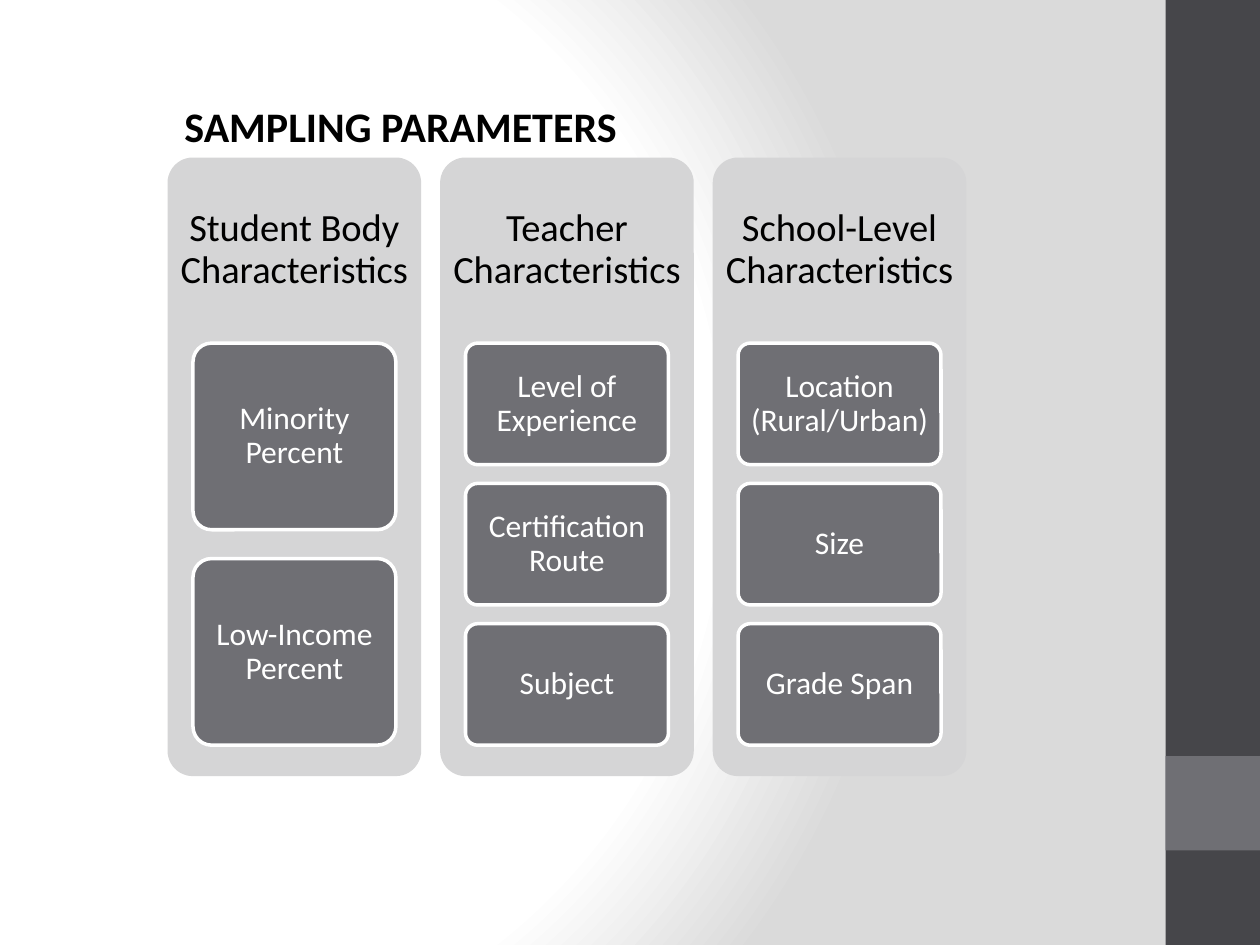
from dataclasses import dataclass

from lxml.etree import fromstring
from pptx import Presentation
from pptx.dml.color import RGBColor
from pptx.enum.shapes import MSO_SHAPE as SHAPE
from pptx.enum.text import MSO_ANCHOR as ANCHOR, PP_ALIGN as ALIGN
from pptx.oxml.ns import nsdecls, qn
from pptx.util import Inches, Pt


@dataclass(frozen=True)
class Theme:
    font: str = "Calibri"
    white: str = "FFFFFF"
    black: str = "000000"
    backdrop: str = "DADADA"
    band: str = "46464A"
    accent: str = "6F6F74"
    panel: str = "D5D5D6"
    title_size: int = 24
    heading_size: int = 22
    card_size: int = 18


THEME = Theme()
CORNER = 0.1
CARD_GAP = 0.154  # share of the card height
COLUMNS = [
    ("Student Body Characteristics", ["Minority Percent", "Low-Income Percent"]),
    ("Teacher Characteristics",
     ["Level of Experience", "Certification Route", "Subject"]),
    ("School-Level Characteristics",
     ["Location (Rural/Urban)", "Size", "Grade Span"]),
]


def write(sp, text, size, color, bold=False, wrap=True, inset=(0, 0), spacing=None):
    """Centre text in a shape; inset is (horizontal, vertical) in inches."""
    tf = sp.text_frame
    tf.word_wrap = wrap
    tf.vertical_anchor = ANCHOR.MIDDLE
    tf.margin_left = tf.margin_right = Inches(inset[0])
    tf.margin_top = tf.margin_bottom = Inches(inset[1])
    p = tf.paragraphs[0]
    p.alignment = ALIGN.CENTER
    p.line_spacing = spacing
    r = p.add_run()
    r.text = text
    r.font.name = THEME.font
    r.font.size = Pt(size)
    r.font.bold = bold
    r.font.color.rgb = RGBColor.from_string(color)


def add_box(s, kind, box, fill, line=None):
    sp = s.shapes.add_shape(kind, *map(Inches, box))
    sp.shadow.inherit = False
    sp.fill.solid()
    sp.fill.fore_color.rgb = RGBColor.from_string(fill)
    if kind == SHAPE.ROUNDED_RECTANGLE:
        sp.adjustments[0] = CORNER
    if line:
        sp.line.color.rgb = RGBColor.from_string(line)
        sp.line.width = Pt(2)
    else:
        sp.line.fill.background()
    return sp


def set_background(s):
    """Radial gradient, which python-pptx has no public method for."""
    s.background.fill.solid()
    bg = s.element.find(".//" + qn("p:bgPr"))
    stops = [(0, THEME.white), (75, THEME.white), (100, THEME.backdrop)]
    gs = "".join(f'<a:gs pos="{pos * 1000}"><a:srgbClr val="{color}"/></a:gs>'
                 for pos, color in stops)
    bg.replace(bg[0], fromstring(
        f'<a:gradFill {nsdecls("a")} rotWithShape="1"><a:gsLst>{gs}</a:gsLst>'
        '<a:path path="circle"><a:fillToRect l="20000" t="50000" r="100000"'
        ' b="50000"/></a:path></a:gradFill>'))


def add_side_band(s, box):
    left, top, width, height = box
    add_box(s, SHAPE.RECTANGLE, box, THEME.band)
    add_box(s, SHAPE.RECTANGLE, (left, top + 0.8 * height, width, width), THEME.accent)


def add_title(s, box, text):
    sp = s.shapes.title
    sp.left, sp.top, sp.width, sp.height = map(Inches, box)
    write(sp, text, THEME.title_size, THEME.black, bold=True, wrap=False)


def add_column(s, box, heading, items):
    left, top, width, height = box
    add_box(s, SHAPE.ROUNDED_RECTANGLE, box, THEME.panel)
    head_h = 0.3 * height
    head = s.shapes.add_textbox(*map(Inches, (left, top, width, head_h)))
    write(head, heading, THEME.heading_size, THEME.black, inset=(0.09, 0.09), spacing=0.9)

    n = len(items)
    card_w = 0.8 * width
    card_h = 0.65 * height / (n + CARD_GAP * (n - 1))
    for i, item in enumerate(items):
        y = top + head_h + i * card_h * (1 + CARD_GAP)
        card = add_box(s, SHAPE.ROUNDED_RECTANGLE,
                       (left + 0.1 * width, y, card_w, card_h),
                       THEME.accent, line=THEME.white)
        write(card, item, THEME.card_size, THEME.white, inset=(0.05, 0.04), spacing=0.9)


def add_columns(s, box, columns, gap=0.15):
    left, top, width, height = box
    n = len(columns)
    col_w = (width - gap * (n - 1)) / n
    for i, (heading, items) in enumerate(columns):
        add_column(s, (left + i * (col_w + gap), top, col_w, height), heading, items)


def main():
    prs = Presentation()
    prs.slide_width, prs.slide_height = Inches(10), Inches(7.5)
    s = prs.slides.add_slide(prs.slide_layouts.get_by_name("Title Only"))
    set_background(s)
    add_side_band(s, (9.25, 0, 0.75, 7.5))
    add_columns(s, (1.33, 1.25, 6.34, 4.91), COLUMNS)
    add_title(s, (1.32, 0.75, 3.72, 0.5), "SAMPLING PARAMETERS")
    prs.save("out.pptx")


if __name__ == "__main__":
    main()
